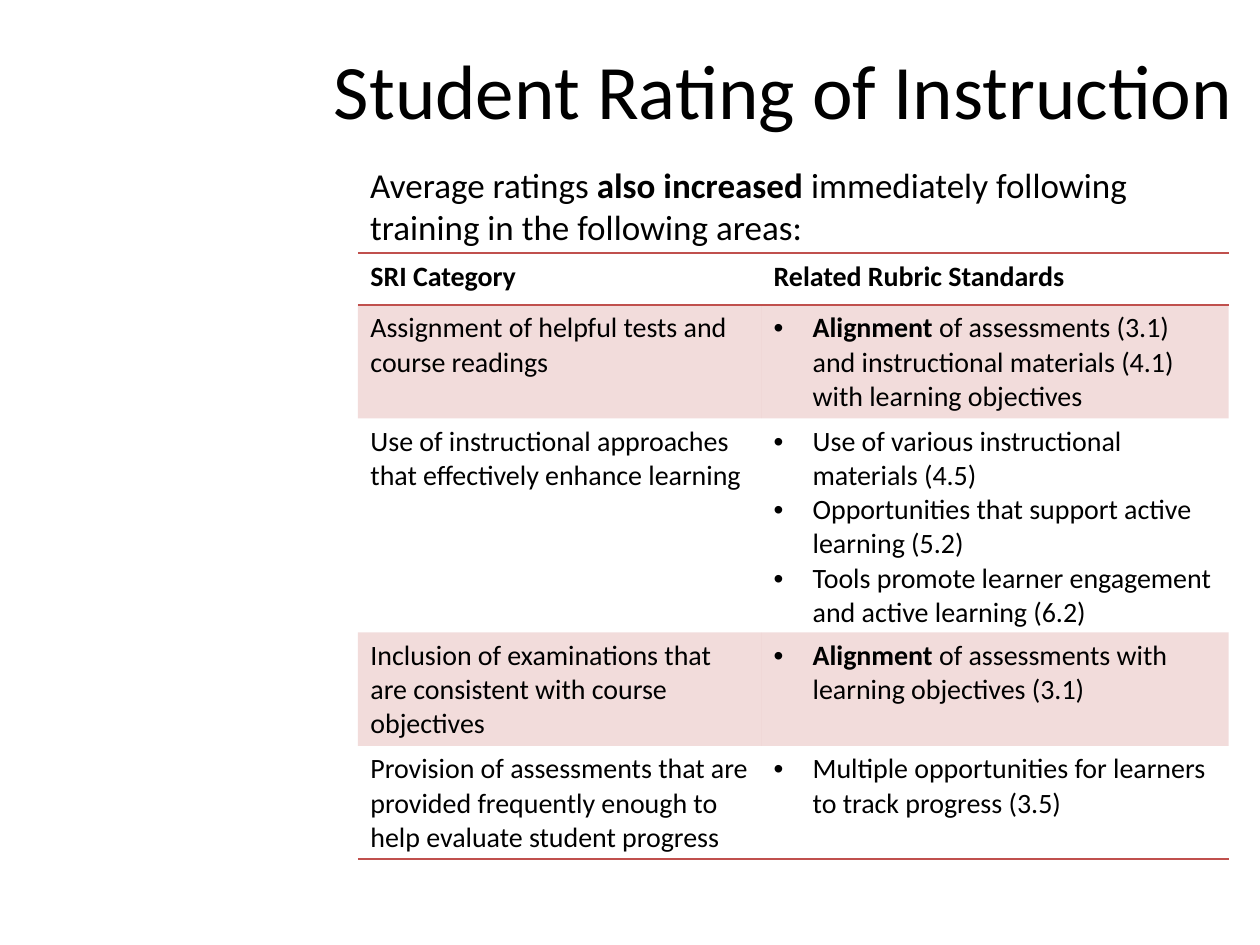
"""Build the Student Rating of Instruction slide with its table of related standards."""
from dataclasses import dataclass

import pptx
import pptx.dml.color
import pptx.enum.text
import pptx.oxml
import pptx.oxml.ns
import pptx.util

Inches = pptx.util.Inches
Pt = pptx.util.Pt
RGBColor = pptx.dml.color.RGBColor
PP_ALIGN = pptx.enum.text.PP_ALIGN
MSO_ANCHOR = pptx.enum.text.MSO_ANCHOR

BLACK = RGBColor(0x00, 0x00, 0x00)
RED = RGBColor(0xC0, 0x50, 0x4D)
BAND_ALPHA = 20
ROW_HEIGHT = Inches(0.41)
COLUMN_WIDTHS = (Inches(3.2), Inches(3.71))
BULLET_INDENT = Inches(0.31)
NS = pptx.oxml.ns.nsdecls("a")

Runs = tuple[tuple[str, bool], ...]


@dataclass(frozen=True)
class TextBox:
    left: float
    top: float
    width: float
    height: float
    runs: Runs
    size: int
    align: PP_ALIGN = PP_ALIGN.LEFT
    anchor: MSO_ANCHOR = MSO_ANCHOR.TOP


@dataclass(frozen=True)
class Rating:
    category: str
    standards: tuple[Runs, ...]


TEXT_BOXES = (
    TextBox(2.44, 0.02, 7.56, 1.37, (("Student Rating of Instruction", False),), 44,
            PP_ALIGN.CENTER, MSO_ANCHOR.MIDDLE),
    TextBox(2.84, 1.25, 6.77, 1.08, (
        ("Average ratings ", False),
        ("also increased", True),
        (" immediately following training in the following areas:", False)), 20),
)
HEADERS = ("SRI Category", "Related Rubric Standards")
RATINGS = (
    Rating("Assignment of helpful tests and course readings", (
        (("Alignment", True),
         (" of assessments (3.1) and instructional materials (4.1) with learning objectives",
          False)),)),
    Rating("Use of instructional approaches that effectively enhance learning", (
        (("Use of various instructional materials (4.5)", False),),
        (("Opportunities that support active learning (5.2)", False),),
        (("Tools promote learner engagement and active learning (6.2)", False),))),
    Rating("Inclusion of examinations that are consistent with course objectives", (
        (("Alignment", True), (" of assessments with learning objectives (3.1)", False)),)),
    Rating("Provision of assessments that are provided frequently enough to help evaluate "
           "student progress", (
               (("Multiple opportunities for learners to track progress (3.5)", False),),)),
)


def set_attributes(target: object, values: dict) -> None:
    for name, value in values.items():
        setattr(target, name, value)


def add_runs(p, runs: Runs, size: int) -> None:
    for text, bold in runs:
        r = p.add_run()
        r.text = text
        set_attributes(r.font, {"name": "Calibri", "size": Pt(size), "bold": bold})
        r.font.color.rgb = BLACK


def add_text_box(slide, box: TextBox) -> None:
    sp = slide.shapes.add_textbox(Inches(box.left), Inches(box.top),
                                  Inches(box.width), Inches(box.height))
    tf = sp.text_frame
    set_attributes(tf, {"word_wrap": True, "vertical_anchor": box.anchor})
    p = tf.paragraphs[0]
    p.alignment = box.align
    add_runs(p, box.runs, box.size)


def add_bullet(p) -> None:
    pPr = p._p.get_or_add_pPr()
    pPr.set("marL", str(BULLET_INDENT))
    pPr.set("indent", str(-BULLET_INDENT))
    pPr.append(pptx.oxml.parse_xml(f'<a:buFont {NS} typeface="Arial"/>'))
    pPr.append(pptx.oxml.parse_xml(f'<a:buChar {NS} char="•"/>'))


def set_borders(cell, edges: str) -> None:
    tcPr = cell._tc.get_or_add_tcPr()
    for edge in "LRTB":
        fill = (f'<a:solidFill><a:srgbClr val="{RED}"/></a:solidFill>'
                if edge in edges else "<a:noFill/>")
        tcPr.append(pptx.oxml.parse_xml(f'<a:ln{edge} {NS} w="{Pt(1)}">{fill}</a:ln{edge}>'))


def set_band(cell, banded: bool) -> None:
    if not banded:
        cell.fill.background()
        return
    cell.fill.solid()
    cell.fill.fore_color.rgb = RED
    color = cell._tc.tcPr.find(pptx.oxml.ns.qn("a:solidFill"))[0]
    color.append(pptx.oxml.parse_xml(f'<a:alpha {NS} val="{BAND_ALPHA * 1000}"/>'))


def fill_cell(cell, paragraphs: tuple[Runs, ...], bulleted: bool) -> None:
    tf = cell.text_frame
    for i, runs in enumerate(paragraphs):
        p = tf.add_paragraph() if i else tf.paragraphs[0]
        if bulleted:
            add_bullet(p)
        add_runs(p, runs, 16)


def add_ratings_table(slide, ratings: tuple[Rating, ...]) -> None:
    s = slide.shapes.add_table(len(ratings) + 1, len(HEADERS), Inches(2.84), Inches(2.01),
                               sum(COLUMN_WIDTHS), Inches(5.07))
    table = s.table
    for column, width in zip(table.columns, COLUMN_WIDTHS):
        column.width = width
    for row in table.rows:
        row.height = ROW_HEIGHT
    s.height = Inches(5.07)
    contents = [tuple((((header, True),),) for header in HEADERS)]
    contents += [((((rating.category, False),),), rating.standards) for rating in ratings]
    for i, row in enumerate(contents):
        edges = {0: "TB", 1: "T", len(ratings): "B"}.get(i, "")
        for j, paragraphs in enumerate(row):
            cell = table.cell(i, j)
            fill_cell(cell, paragraphs, bulleted=i > 0 and j == 1)
            set_borders(cell, edges)
            set_band(cell, banded=i % 2 == 1)


def main() -> None:
    prs = pptx.Presentation()
    set_attributes(prs, {"slide_width": Inches(10), "slide_height": Inches(7.5)})
    slide = prs.slides.add_slide(prs.slide_layouts[6])
    for box in TEXT_BOXES:
        add_text_box(slide, box)
    add_ratings_table(slide, RATINGS)
    prs.save("out.pptx")


if __name__ == "__main__":
    main()
